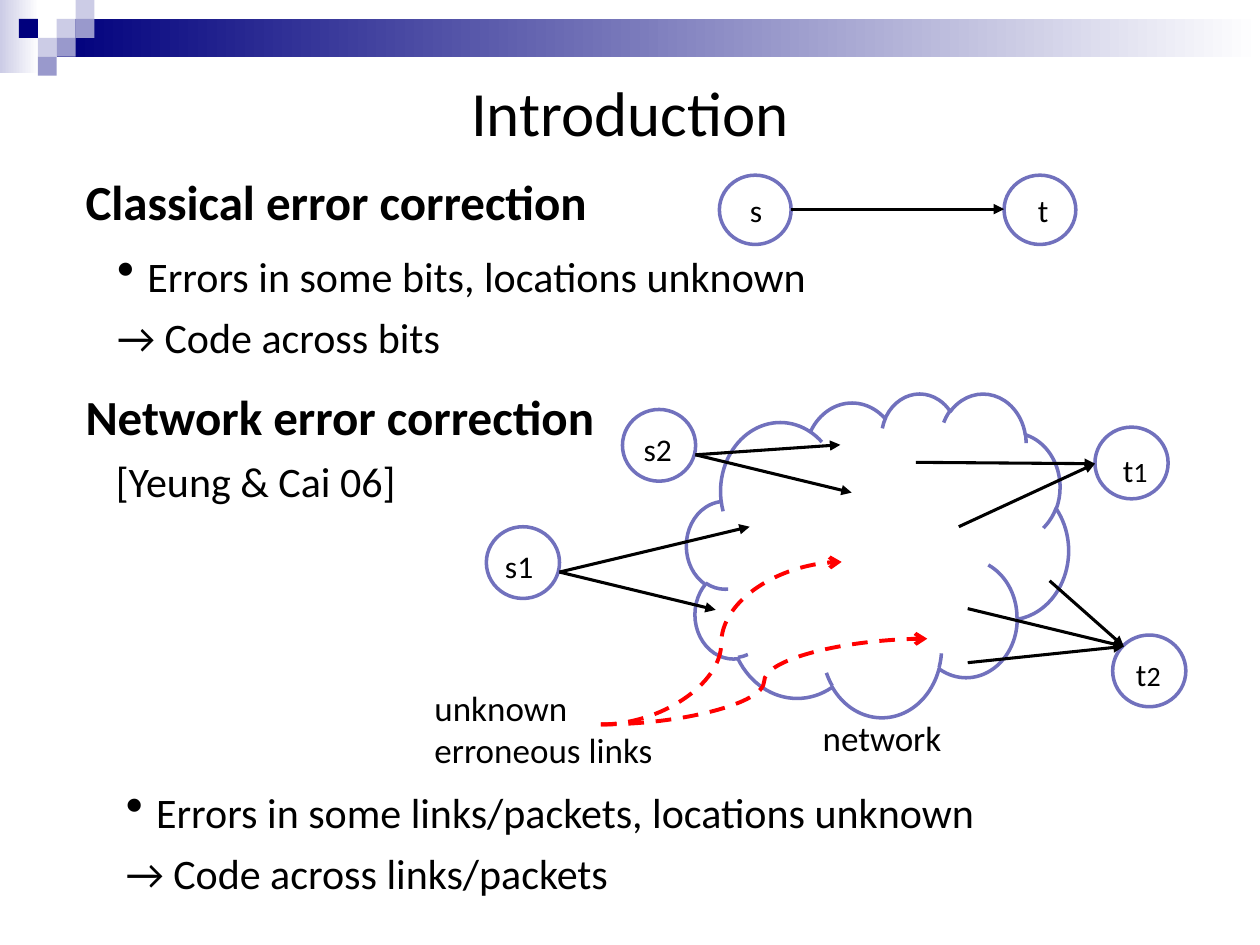
from dataclasses import dataclass

from lxml import etree
from pptx import Presentation
from pptx.dml.color import RGBColor
from pptx.enum.dml import MSO_LINE
from pptx.enum.shapes import MSO_CONNECTOR, MSO_SHAPE
from pptx.enum.text import MSO_ANCHOR, MSO_AUTO_SIZE, PP_ALIGN
from pptx.oxml.ns import qn
from pptx.util import Pt

RECT, OVAL, CLOUD = MSO_SHAPE.RECTANGLE, MSO_SHAPE.OVAL, MSO_SHAPE.CLOUD
LINE, CURVE = MSO_CONNECTOR.STRAIGHT, MSO_CONNECTOR.CURVE
LEFT, CENTER = PP_ALIGN.LEFT, PP_ALIGN.CENTER
TOP, MIDDLE = MSO_ANCHOR.TOP, MSO_ANCHOR.MIDDLE
FIT, FIXED = MSO_AUTO_SIZE.SHAPE_TO_FIT_TEXT, MSO_AUTO_SIZE.NONE
DASH = MSO_LINE.DASH


@dataclass(frozen=True)
class Theme:
    font: str = "Calibri"
    black: str = "000000"
    white: str = "FFFFFF"
    navy: str = "00007D"
    pale: str = "CCCCE6"
    mid: str = "9999CC"
    edge: str = "7171BD"
    red: str = "FF0000"
    title: int = 36
    head: int = 28
    body: int = 24
    note: int = 20
    label: int = 18
    index: int = 16


T = Theme()


@dataclass(frozen=True)
class Box:
    x: float
    y: float
    w: float
    h: float

    def lengths(self) -> list[Pt]:
        return [Pt(v) for v in (self.x, self.y, self.w, self.h)]


@dataclass(frozen=True)
class Para:
    runs: tuple[tuple[str, int], ...]
    bold: bool = False
    bullet: bool = False
    left: float = 0
    before: float = 0
    align: PP_ALIGN = LEFT


@dataclass(frozen=True)
class Node:
    ring: Box
    label: Box
    para: Para


@dataclass(frozen=True)
class Arrow:
    start: tuple[float, float]
    end: tuple[float, float]


def rgb(code: str) -> RGBColor:
    return RGBColor.from_string(code)


def add_fill(shapes, box: Box, color: str, fade: bool = False) -> None:
    shape = shapes.add_shape(RECT, *box.lengths())
    shape.shadow.inherit = False
    shape.line.fill.background()
    if fade:
        shape.fill.gradient()
        shape.fill.gradient_angle = 0
        for stop, code in zip(shape.fill.gradient_stops, (color, T.white)):
            stop.color.rgb = rgb(code)
    else:
        shape.fill.solid()
        shape.fill.fore_color.rgb = rgb(color)


def add_ring(shapes, kind: MSO_SHAPE, box: Box) -> None:
    shape = shapes.add_shape(kind, *box.lengths())
    shape.shadow.inherit = False
    shape.fill.background()
    shape.line.color.rgb = rgb(T.edge)
    shape.line.width = Pt(2)


def add_text(shapes, box: Box, paras: list[Para], anchor=TOP, size=FIT) -> None:
    frame = shapes.add_textbox(*box.lengths()).text_frame
    style = {"word_wrap": True, "auto_size": size, "vertical_anchor": anchor}
    for key, value in style.items():
        setattr(frame, key, value)
    for i, item in enumerate(paras):
        para = frame.add_paragraph() if i else frame.paragraphs[0]
        para.alignment = item.align
        para.space_before = Pt(item.before)
        props = para._p.get_or_add_pPr()
        props.set("marL", str(Pt(item.left)))
        props.set("indent", str(Pt(-item.left if item.bullet else 0)))
        if item.bullet:
            etree.SubElement(props, qn("a:buSzPct"), val="120000")
            etree.SubElement(props, qn("a:buChar"), char="•")
        for words, points in item.runs:
            run = para.add_run()
            run.text = words
            style = {"name": T.font, "size": Pt(points), "bold": item.bold}
            for key, value in style.items():
                setattr(run.font, key, value)
            run.font.color.rgb = rgb(T.black)


def add_arrow(shapes, arrow: Arrow, kind=LINE, color=T.black,
              width=1.75, tip="triangle", dash=None) -> None:
    ends = [Pt(v) for v in (*arrow.start, *arrow.end)]
    link = shapes.add_connector(kind, *ends)
    style = {"width": Pt(width), "dash_style": dash}
    for key, value in style.items():
        setattr(link.line, key, value)
    link.line.color.rgb = rgb(color)
    etree.SubElement(link.line._ln, qn("a:tailEnd"), type=tip)
    etree.SubElement(link._element.spPr, qn("a:effectLst"))


def one(words: str, size: int, **style) -> Para:
    return Para(((words, size),), **style)


def points(first: str, second: str) -> list[Para]:
    return [one(first, T.body, bullet=True, left=17.3),
            one(second, T.body, before=6)]


def node(x: float, y: float, label: Box, para: Para, w=41.8, h=41) -> Node:
    return Node(Box(x, y, w, h), label, para)


UNIT = 10.8
TILES = [(3, 1, T.pale), (4, 0, T.pale), (4, 1, T.mid), (2, 2, T.pale),
         (1, 1, T.navy), (3, 2, T.mid), (2, 3, T.mid)]

TEXTS = [
    (Box(41.8, 94.3, 652.3, 41),
     [one("Classical error correction", T.head, bold=True)]),
    (Box(59.8, 139.7, 652.3, 72),
     points("Errors in some bits, locations unknown", "→ Code across bits")),
    (Box(41.8, 217.4, 652.3, 76.3),
     [one("Network error correction", T.head, bold=True),
      one("[Yeung & Cai 06]", T.body, left=17.3, before=6)]),
    (Box(64.8, 445.7, 652.3, 72),
     points("Errors in some links/packets, locations unknown",
            "→ Code across links/packets")),
    (Box(241.2, 388.8, 146.2, 56.2), [one("unknown erroneous links", T.note)]),
    (Box(463, 406.1, 129.6, 27.4), [one("network", T.note)]),
]

NODES = [
    node(411.1, 100.1, Box(413.3, 105.8, 41, 29.5),
         one("s", T.label, left=8.1), 41, 39.6),
    node(573.8, 100.1, Box(573.8, 105.8, 41, 29.5),
         one("t", T.label, left=12.2), 41, 39.6),
    node(355.7, 234, Box(348.5, 241.9, 71.3, 29.5),
         one("s2", T.label, left=12.2)),
    node(277.9, 301, Box(269.3, 308.9, 56.9, 29.5),
         one("s1", T.label, left=12.2)),
    node(625.7, 244.1, Box(630.7, 254.2, 36, 29.5),
         Para((("t", T.label), ("1", T.index)), align=CENTER)),
    node(635.8, 362.9, Box(637.9, 370.8, 51.8, 29.5),
         Para((("t", T.label), ("2", T.index)), left=4.1)),
]

S1, S2 = (319.7, 326.9), (397.4, 259.9)
T1, T2 = (625.7, 265), (642.2, 369.4)
ARROWS = [
    Arrow((452.2, 119.5), (573.8, 119.5)),
    Arrow(S1, (428.4, 301)), Arrow(S1, (409, 348.5)),
    Arrow(S2, (480.2, 254.2)), Arrow(S2, (486.7, 281.5)),
    Arrow((523.4, 264.2), T1), Arrow((547.9, 301), T1),
    Arrow((599.8, 331.9), T2), Arrow((553, 347.8), T2),
    Arrow((553, 378.7), T2),
]
FAULT = (343.4, 414)
FAULTS = [Arrow(FAULT, (481, 321.1)), Arrow(FAULT, (529.9, 365))]


def main() -> None:
    deck = Presentation()
    deck.slide_width, deck.slide_height = Pt(720), Pt(540)
    shapes = deck.slides.add_slide(deck.slide_layouts[6]).shapes

    add_fill(shapes, Box(0, 0, 22.3, 41.8), T.pale, True)
    add_fill(shapes, Box(3 * UNIT, UNIT, 687.6, 2 * UNIT), T.navy, True)
    for col, row, color in TILES:
        add_fill(shapes, Box(col * UNIT, row * UNIT, UNIT, UNIT), color)

    add_text(shapes, Box(36, 9.4, 648, 108),
             [one("Introduction", T.title, align=CENTER)], MIDDLE, FIXED)
    for box, paras in TEXTS:
        add_text(shapes, box, paras)
    add_ring(shapes, CLOUD, Box(392.4, 224.6, 218.2, 185))
    for item in NODES:
        add_text(shapes, item.label, [item.para])
        add_ring(shapes, OVAL, item.ring)
    for arrow in ARROWS:
        add_arrow(shapes, arrow)
    for arrow in FAULTS:
        add_arrow(shapes, arrow, CURVE, T.red, 2.25, "arrow", DASH)

    deck.save("out.pptx")


if __name__ == "__main__":
    main()
